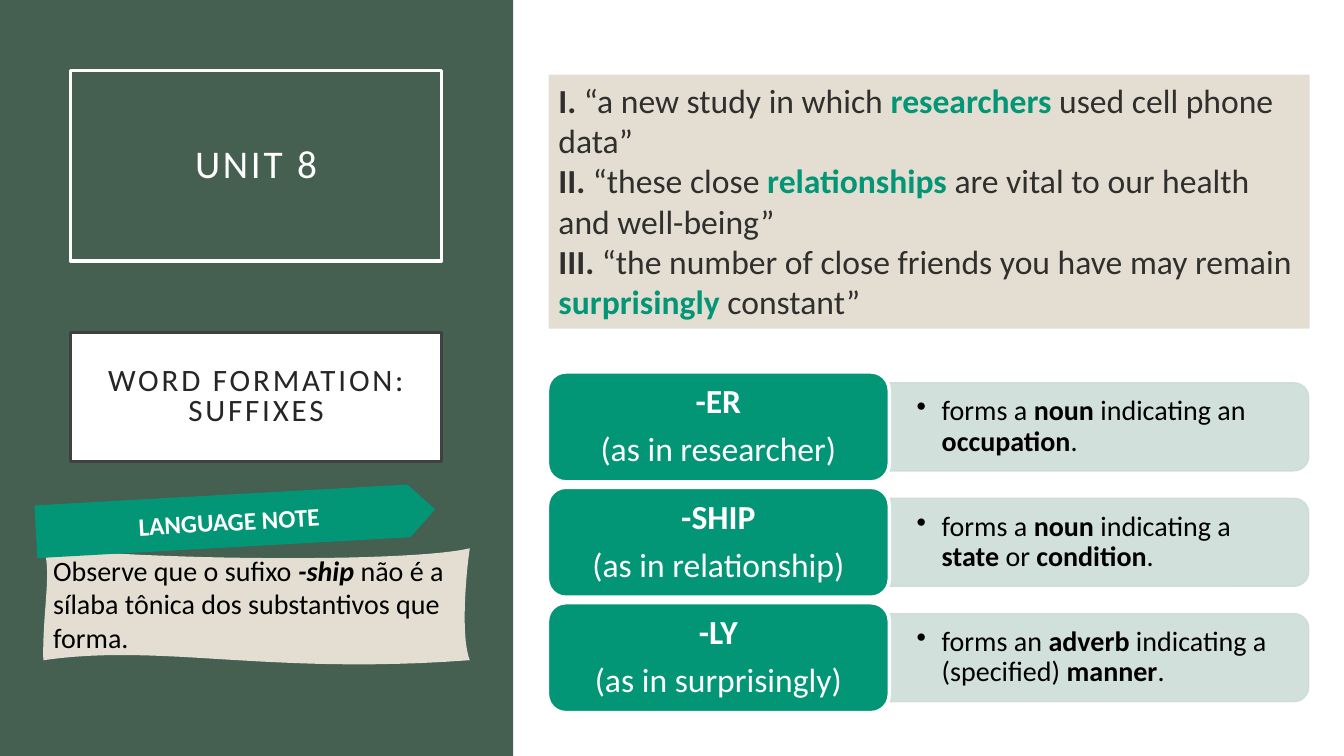
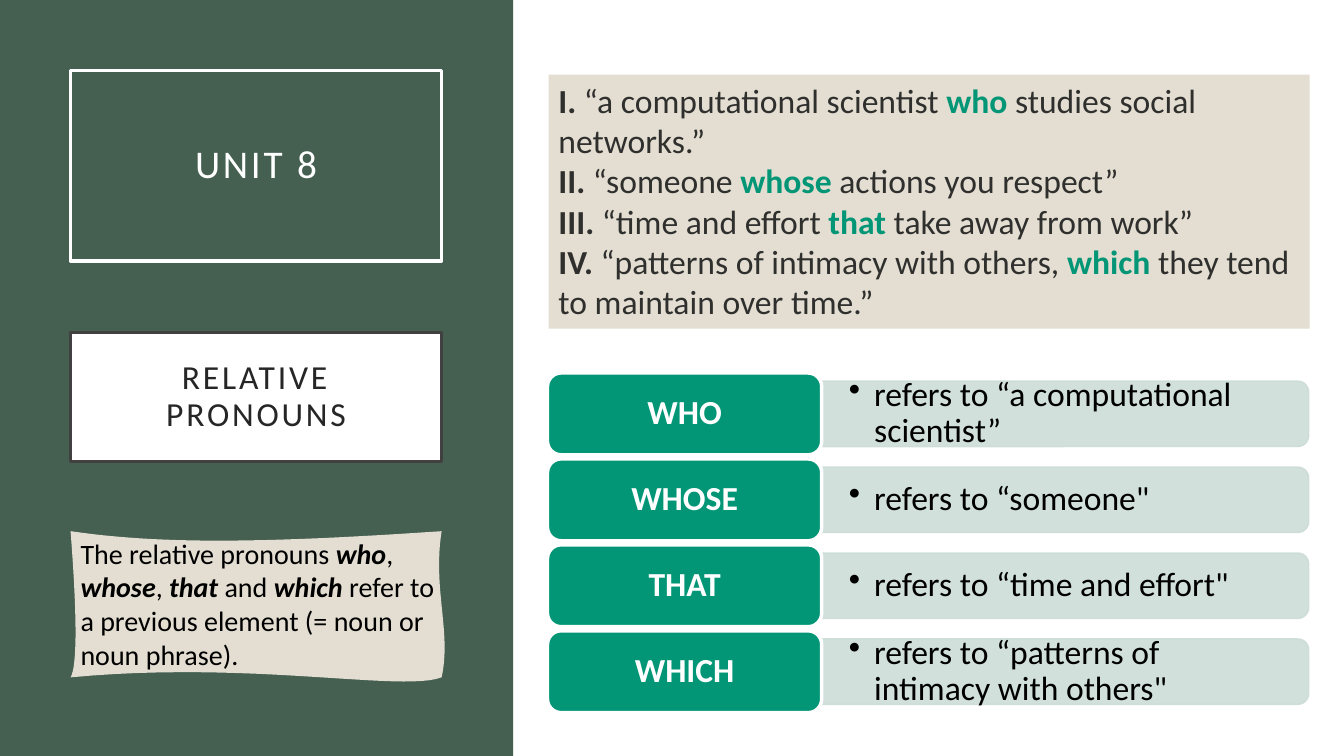
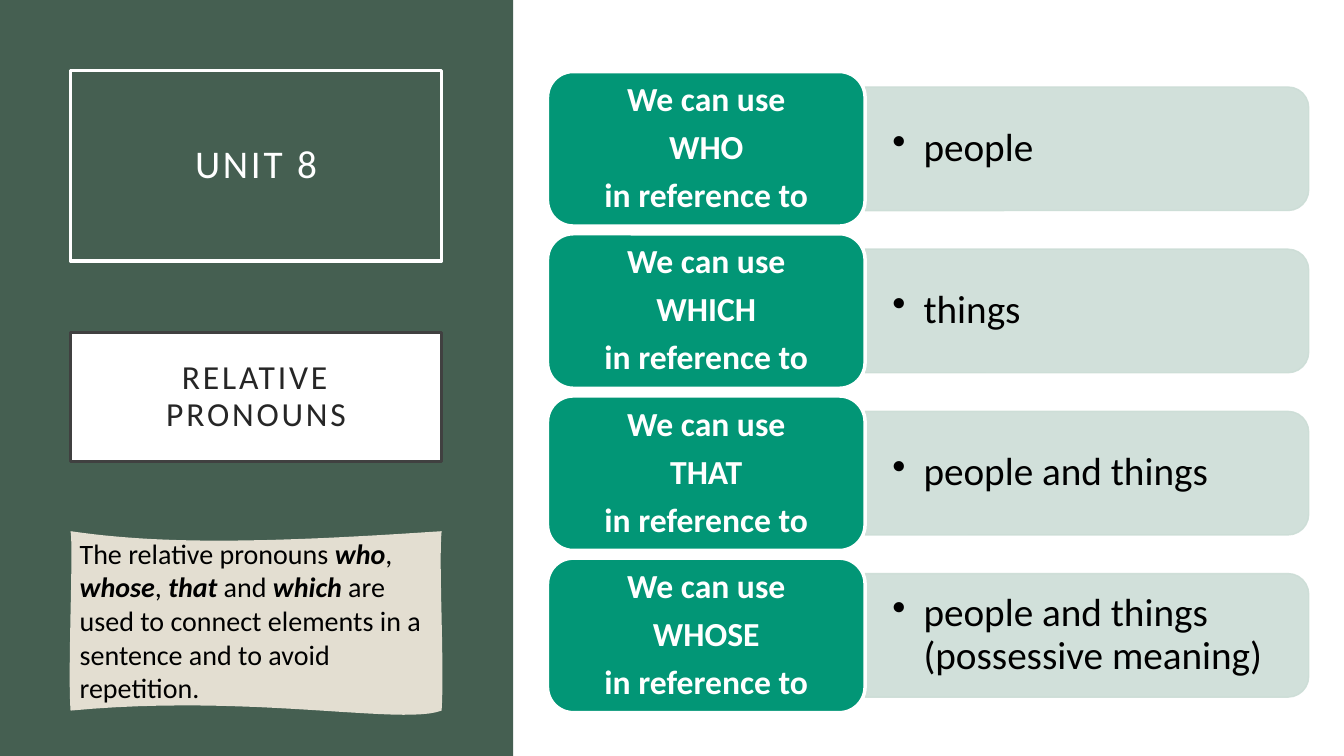
"""Build three grammar slides on suffixes and relative pronouns."""
from pptx import Presentation
from pptx.dml.color import RGBColor
from pptx.enum.shapes import MSO_SHAPE as Kind
from pptx.enum.text import MSO_ANCHOR as Anchor, MSO_AUTO_SIZE as Auto, PP_ALIGN as Align
from pptx.oxml.ns import qn
from pptx.oxml.xmlchemy import OxmlElement as Node
from pptx.util import Inches, Pt

FONT = "Calibri"
GREEN, TEAL, MINT, SAND = "455F51", "029676", "CCDDD6", "E3DED1"
WHITE, BLACK, INK, GREY, EDGE = "FFFFFF", "000000", "2F2F2E", "262626", "404040"
LEFT, RIGHT = 5.43, 12.98
SIDE, WIDE = 0.7, 3.68


def rgb(code):
    """Turn a hex string into a colour."""
    return RGBColor.from_string(code)


def paint(shape, fill=None, line=None, width=2.5):
    """Set fill and line, and drop the shadow."""
    shape.shadow.inherit = False
    if fill:
        shape.fill.solid()
        shape.fill.fore_color.rgb = rgb(fill)
    else:
        shape.fill.background()
    if line:
        shape.line.color.rgb = rgb(line)
        shape.line.width = Pt(width)
    else:
        shape.line.fill.background()


def add(slide, kind, box, fill=None, line=None, width=2.5):
    """Add a painted preset shape."""
    shape = slide.shapes.add_shape(kind, *map(Inches, box))
    paint(shape, fill, line, width)
    return shape


def fade(shape, share):
    """Make the shape's own colours partly clear."""
    for clr in shape.element.spPr.iter(qn("a:srgbClr")):
        alpha = Node("a:alpha")
        alpha.set("val", str(share * 1000))
        clr.append(alpha)


def style(run, size, color, bold=False, slant=False, track=0):
    """Format one run."""
    font = run.font
    font.name, font.size, font.bold, font.italic = FONT, Pt(size), bold, slant
    font.color.rgb = rgb(color)
    if track:
        run.font._element.set("spc", str(track * 100))


def rich(par, text, size, color, hot=None, slant=False, track=0):
    """Add runs, with the parts between asterisks in bold."""
    for i, part in enumerate(text.split("*")):
        if part:
            run = par.add_run()
            run.text = part
            mark = i % 2 == 1
            style(run, size, hot if mark and hot else color, mark, mark and slant, track)


def frame(shape, anchor=Anchor.MIDDLE, pad=(0.1, 0.05)):
    """Prepare a text frame that wraps."""
    text = shape.text_frame
    text.word_wrap, text.auto_size, text.vertical_anchor = True, Auto.NONE, anchor
    text.margin_left = text.margin_right = Inches(pad[0])
    text.margin_top = text.margin_bottom = Inches(pad[1])
    return text


def pars(text, lines, align=Align.LEFT, pitch=1.0, after=0):
    """Yield one formatted paragraph with each line."""
    for i, line in enumerate(lines):
        par = text.add_paragraph() if i else text.paragraphs[0]
        par.alignment, par.line_spacing, par.space_after = align, pitch, Pt(after)
        par.space_before = Pt(0)
        yield par, line


def write(shape, lines, size, color, pad=(0.1, 0.05), pitch=1.0, after=0, track=0):
    """Write centred lines in a shape."""
    for par, line in pars(frame(shape, pad=pad), lines, Align.CENTER, pitch, after):
        rich(par, line, size, color, track=track)


def start(deck, topic, size=24, pitch=0.9):
    """Add a slide with the side band, the unit title and the topic."""
    slide = deck.slides.add_slide(deck.slide_layouts[5])
    title = slide.shapes.title
    band = add(slide, Kind.RECTANGLE, (0, 0, 5.09, 7.5), GREEN)
    title.element.addprevious(band.element)
    title.left, title.top = Inches(SIDE), Inches(0.7)
    title.width, title.height = Inches(WIDE), Inches(1.89)
    paint(title, line=WHITE)
    write(title, ["UNIT 8"], 28, WHITE, (0.2, 0.2), 0.9, track=2)
    card = add(slide, Kind.RECTANGLE, (SIDE, 3.3, WIDE, 1.28), WHITE, EDGE)
    write(card, topic, size, GREY, (0.2, 0.2), pitch, track=2)
    return slide


def curve(p, q, r, s, steps=24):
    """Return points along a cubic curve, without its start."""
    ts = [i / steps for i in range(1, steps + 1)]
    return [tuple(Inches((1 - t) ** 3 * a + 3 * t * (1 - t) ** 2 * b
                         + 3 * t * t * (1 - t) * c + t ** 3 * d)
                  for a, b, c, d in zip(p, q, r, s)) for t in ts]


def note(slide, box, bends, text):
    """Add a wavy paper note; bends holds two handles for each side."""
    x, y, w, h = box
    ends = [(x, y), (x + w, y), (x + w, y + h), (x, y + h), (x, y)]
    pen = slide.shapes.build_freeform(Inches(x), Inches(y))
    for i in range(4):
        pen.add_line_segments(curve(ends[i], *bends[2 * i:2 * i + 2], ends[i + 1]), close=i == 3)
    paper = pen.convert_to_shape()
    paint(paper, SAND)
    for par, line in pars(frame(paper, Anchor.TOP), [text]):
        rich(par, line, 20, BLACK, slant=True)


def quotes(slide, lines):
    """Add the panel of numbered quotes."""
    panel = add(slide, Kind.RECTANGLE, (5.44, 0.74, 7.55, 2.52), SAND)
    for par, (mark, line) in pars(frame(panel, Anchor.TOP), zip(("I", "II", "III", "IV"), lines)):
        rich(par, f"*{mark}. *", 24, INK)
        rich(par, line, 24, INK, TEAL)


def bullet(par, indent):
    """Give a paragraph a hanging round bullet."""
    props = par._p.get_or_add_pPr()
    props.set("marL", str(Inches(indent)))
    props.set("indent", str(-Inches(indent)))
    dot = Node("a:buChar")
    dot.set("char", "•")
    props.append(dot)


def table(slide, top, width, size, rows, indent=0.25):
    """Stack label boxes, each with a bulleted bar at its right."""
    high = (7.07 - top) / (len(rows) * 1.05 - 0.05)
    edge, bar = LEFT + width, high * 0.8
    long = RIGHT - edge
    for i, (label, text) in enumerate(rows):
        y = top + i * high * 1.05
        mid = y + high / 2
        back = add(slide, Kind.ROUND_2_SAME_RECTANGLE,
                   (edge + (long - bar) / 2, mid - long / 2, bar, long), MINT, MINT, 1)
        back.rotation = 90
        fade(back, 90)
        area = map(Inches, (edge, mid - bar / 2, long - 0.05, bar))
        body = frame(slide.shapes.add_textbox(*area), pad=(0.27, 0.14))
        for par, line in pars(body, [text], pitch=0.9, after=size * 0.15):
            bullet(par, indent)
            rich(par, line, size, BLACK)
        box = add(slide, Kind.ROUNDED_RECTANGLE, (LEFT, y, width, high), TEAL, WHITE)
        write(box, label, 24, WHITE, pitch=0.9, after=8.4)


def suffix(deck):
    """Build the slide on suffixes."""
    slide = start(deck, ["WORD FORMATION:", "SUFFIXES"], 22.2, 0.8)
    note(slide, (0.43, 5.44, 4.23, 1.11),
         [(1.82, 5.57), (4.12, 5.57), (4.62, 5.71), (4.57, 6.32),
          (2.64, 6.7), (1.62, 6.38), (0.42, 6.07), (0.52, 5.65)],
         "Observe que o sufixo *-ship *não é a sílaba tônica dos substantivos que forma.")
    flag = add(slide, Kind.PENTAGON, (0.36, 4.91, 3.95, 0.51), TEAL, TEAL, 1)
    flag.rotation = 356.8
    write(flag, ["*LANGUAGE NOTE*"], 18, WHITE)
    quotes(slide, ["“a new study in which *researchers* used cell phone data”",
                   "“these close *relationships *are vital to our health and well-being”",
                   "“the number of close friends you have may remain *surprisingly *constant”"])
    table(slide, 3.69, 3.39, 20, [
        (["*-ER*", "(as in researcher)"], "forms a *noun* indicating an *occupation*."),
        (["*-SHIP*", "(as in relationship)"],
         "forms a *noun* indicating a *state *or *condition*."),
        (["*-LY*", "(as in surprisingly)"],
         "forms an *adverb* indicating a (specified) *manner*.")])


def pronoun(deck, high, sides, tail):
    """Start a slide on relative pronouns, with its note."""
    slide = start(deck, ["RELATIVE PRONOUNS"])
    foot = 5.27 + high
    note(slide, (SIDE, 5.27, WIDE, high),
         [(1.58, 5.4), (2.61, 5.39), *sides[:2],
          (3.99, foot + 0.15), (2.5, foot - 0.17), *sides[2:]],
         f"The relative pronouns *who*, *whose*, *that* and *which* {tail}")
    return slide


def refer(deck):
    """Build the slide on what each pronoun refers to."""
    slide = pronoun(deck, 1.45, [(4.29, 5.85), (4.48, 6.27), (0.8, 6.55), (0.72, 5.54)],
                    "refer to a previous element (= noun or noun phrase).")
    quotes(slide, ["“a computational scientist *who* studies social networks.”",
                   "“someone *whose* actions you respect”",
                   "“time and effort *that* take away from work”",
                   "“patterns of intimacy with others, *which* they tend to maintain over time.”"])
    nouns = {"WHO": "“a computational scientist”", "WHOSE": "“someone\"",
             "THAT": "“time and effort\"", "WHICH": "“patterns of intimacy with others\""}
    table(slide, 3.7, 2.72, 24,
          [([f"*{word}*"], f"refers to {noun}") for word, noun in nouns.items()])


def usage(deck):
    """Build the slide on when to use each pronoun."""
    slide = pronoun(deck, 1.78, [(4.35, 5.62), (4.41, 6.61), (0.67, 6.64), (0.73, 5.45)],
                    "are used to connect elements in a sentence and to avoid repetition.")
    uses = {"WHO": "people", "WHICH": "things", "THAT": "people and things",
            "WHOSE": "people and things (possessive meaning)"}
    table(slide, 0.71, 3.15, 28,
          [(["*We can use*", f"*{word}*", "*in reference to*"], use)
           for word, use in uses.items()], 0.31)


def main():
    """Build and save the deck."""
    deck = Presentation()
    deck.slide_width, deck.slide_height = Inches(13.33), Inches(7.5)
    suffix(deck)
    refer(deck)
    usage(deck)
    deck.save("out.pptx")


if __name__ == "__main__":
    main()
